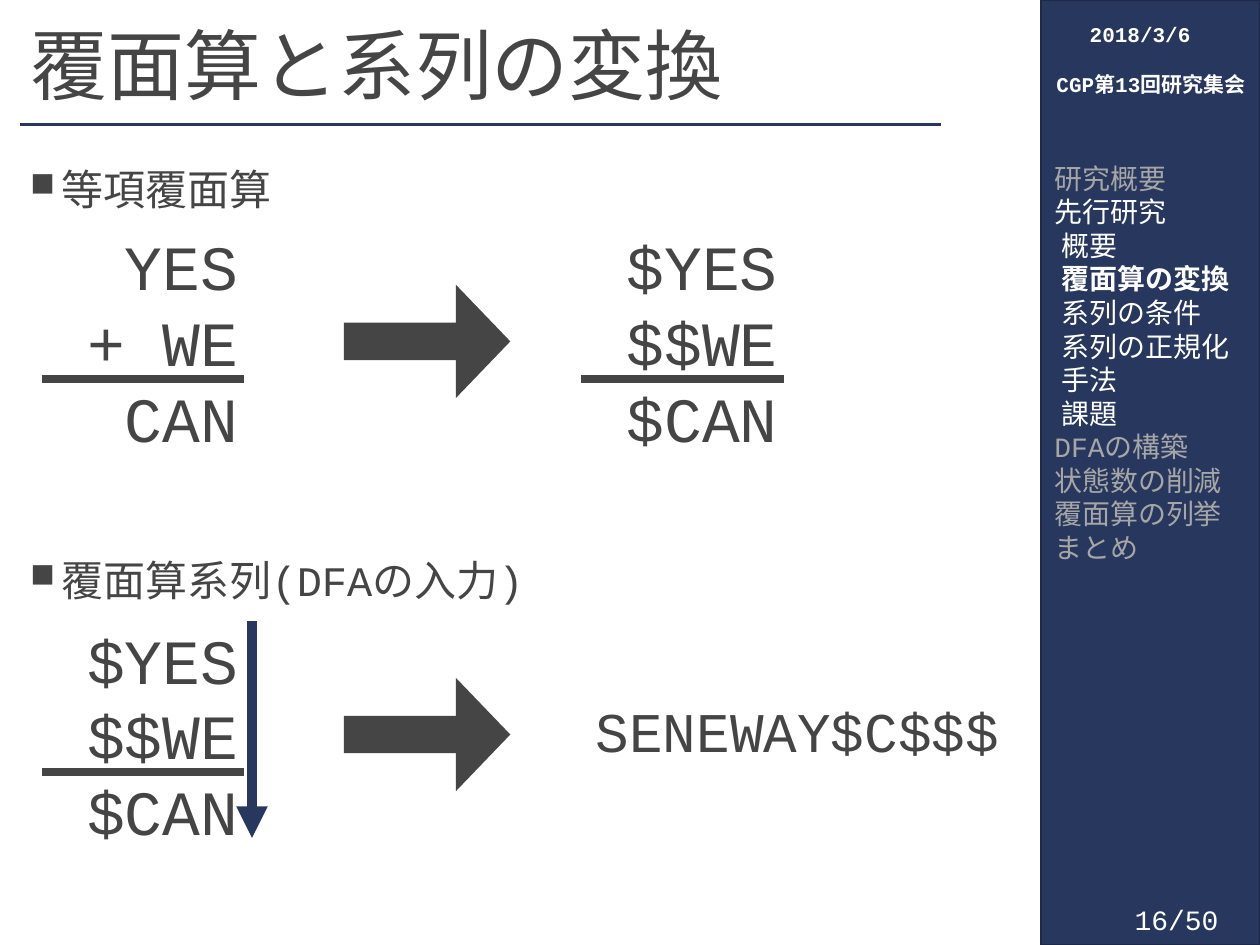
from lxml import etree
from pptx import Presentation
from pptx.dml.color import RGBColor
from pptx.enum import shapes, text
from pptx.oxml import ns
from pptx.util import Inches, Pt

NAVY = RGBColor(0x27, 0x37, 0x5D)
EDGE = RGBColor(0x1D, 0x29, 0x45)
INK = RGBColor(0x45, 0x45, 0x45)
WHITE = RGBColor(0xFF, 0xFF, 0xFF)
GREY = RGBColor(0xA6, 0xA6, 0xA6)
FONT = "Courier New"
LEFT, CENTER, RIGHT = text.PP_ALIGN.LEFT, text.PP_ALIGN.CENTER, text.PP_ALIGN.RIGHT
TOP, MIDDLE = text.MSO_ANCHOR.TOP, text.MSO_ANCHOR.MIDDLE

TITLE = "覆面算と系列の変換"
HEADINGS = [("等項覆面算", 1.17), ("覆面算系列(DFAの入力)", 4.27)]
PADDED = ["$YES", "$$WE", "$CAN"]
SUMS = [
    (-0.29, 1.76, ["YES", "+ WE", "CAN"]),
    (3.99, 1.76, PADDED),
    (-0.29, 4.88, PADDED),
]
ARROW_TOPS = [2.26, 5.38]
SEQUENCE = "SENEWAY$C$$$"
DATE = "2018/3/6"
MEETING = "CGP第13回研究集会"
PAGE = "16/50"
CURRENT = "覆面算の変換"
AGENDA = [
    ("研究概要", []),
    ("先行研究", ["概要", CURRENT, "系列の条件", "系列の正規化", "手法", "課題"]),
    ("DFAの構築", []),
    ("状態数の削減", []),
    ("覆面算の列挙", []),
    ("まとめ", []),
]

deck = Presentation()
deck.slide_width, deck.slide_height = Inches(10), Inches(7.5)
slide = deck.slides.add_slide(deck.slide_layouts[6])


def inches(*lengths):
    return [Inches(length) for length in lengths]


def add_text(box, lines, size, color=INK, align=LEFT, anchor=TOP, wrap=True, bold=False):
    frame = slide.shapes.add_textbox(*inches(*box)).text_frame
    frame.word_wrap, frame.vertical_anchor = wrap, anchor
    for index, line in enumerate(lines):
        paragraph = frame.paragraphs[0] if index == 0 else frame.add_paragraph()
        paragraph.alignment = align
        run = paragraph.add_run()
        run.text = line
        run.font.color.rgb = color
        for key, value in {"name": FONT, "size": Pt(size), "bold": bold}.items():
            setattr(run.font, key, value)
    return frame


def add_line(start, end, color, width):
    line = slide.shapes.add_connector(
        shapes.MSO_CONNECTOR.STRAIGHT, *inches(*start, *end))
    line.line.color.rgb, line.line.width = color, Pt(width)
    etree.SubElement(line.line._get_or_add_ln().getparent(), ns.qn("a:effectLst"))
    return line


def add_block(kind, box, fill):
    block = slide.shapes.add_shape(kind, *inches(*box))
    block.shadow.inherit = False
    block.fill.solid()
    block.fill.fore_color.rgb = fill
    return block


def add_heading(heading, top):
    paragraph = add_text((0.14, top, 8.12, 0.6), [heading], 24).paragraphs[0]
    paragraph.line_spacing, paragraph.space_before = 1.2, Pt(10)
    properties = paragraph._p.get_or_add_pPr()
    properties.set("marL", str(Inches(0.25)))
    properties.set("indent", str(Inches(-0.25)))
    etree.SubElement(properties, ns.qn("a:buSzPct"), val="80000")
    etree.SubElement(properties, ns.qn("a:buChar"), char="■")


def add_sum(left, top, terms):
    add_text((left, top, 2.28, 1.92), terms, 36, align=RIGHT)
    add_line((left + 0.62, top + 1.25), (left + 2.23, top + 1.25), INK, 4.5)


def add_agenda():
    entries = [(name, 0, WHITE if parts else GREY, parts) for name, parts in AGENDA]
    rows = []
    for name, level, color, parts in entries:
        rows.append((name, level, color))
        rows += [(part, 1, color) for part in parts]
    frame = add_text((8.27, 1.23, 1.68, 3.33), [row[0] for row in rows], 16, wrap=False)
    for paragraph, (name, level, color) in zip(frame.paragraphs, rows):
        paragraph._p.get_or_add_pPr().set("marL", str(Inches(0.06 * level)))
        font = paragraph.runs[0].font
        font.color.rgb, font.bold = color, name == CURRENT


add_line((0.16, 0.99), (7.47, 0.99), NAVY, 1.5)
sidebar = add_block(shapes.MSO_SHAPE.RECTANGLE, (8.26, 0, 1.74, 7.5), NAVY)
sidebar.line.color.rgb, sidebar.line.width = EDGE, Pt(1)

title = add_text((0.14, 0.12, 8.12, 0.87), [TITLE], 44, anchor=MIDDLE)
title.paragraphs[0].line_spacing = 0.9
for heading in HEADINGS:
    add_heading(*heading)
for terms in SUMS:
    add_sum(*terms)
for top in ARROW_TOPS:
    arrow = add_block(shapes.MSO_SHAPE.RIGHT_ARROW, (2.73, top, 1.32, 0.9), INK)
    arrow.line.fill.background()
    arrow.adjustments[0], arrow.adjustments[1] = 0.33, 0.48

add_text((4.63, 5.48, 3.44, 0.64), [SEQUENCE], 32, wrap=False)
reading = add_line((2, 4.93), (2, 6.65), NAVY, 6)
etree.SubElement(reading.line._get_or_add_ln(), ns.qn("a:tailEnd"), type="triangle")

add_text((8.55, 0.07, 1.15, 0.4), [DATE], 12, WHITE, anchor=MIDDLE, bold=True)
add_text((8.27, 0.47, 1.73, 0.4), [MEETING], 12, WHITE, CENTER, MIDDLE, bold=True)
add_agenda()
page = add_text((7.75, 7.1, 2.12, 0.4), [PAGE], 16, WHITE, RIGHT, MIDDLE)
page.margin_right = Inches(0.2)

deck.save("out.pptx")
